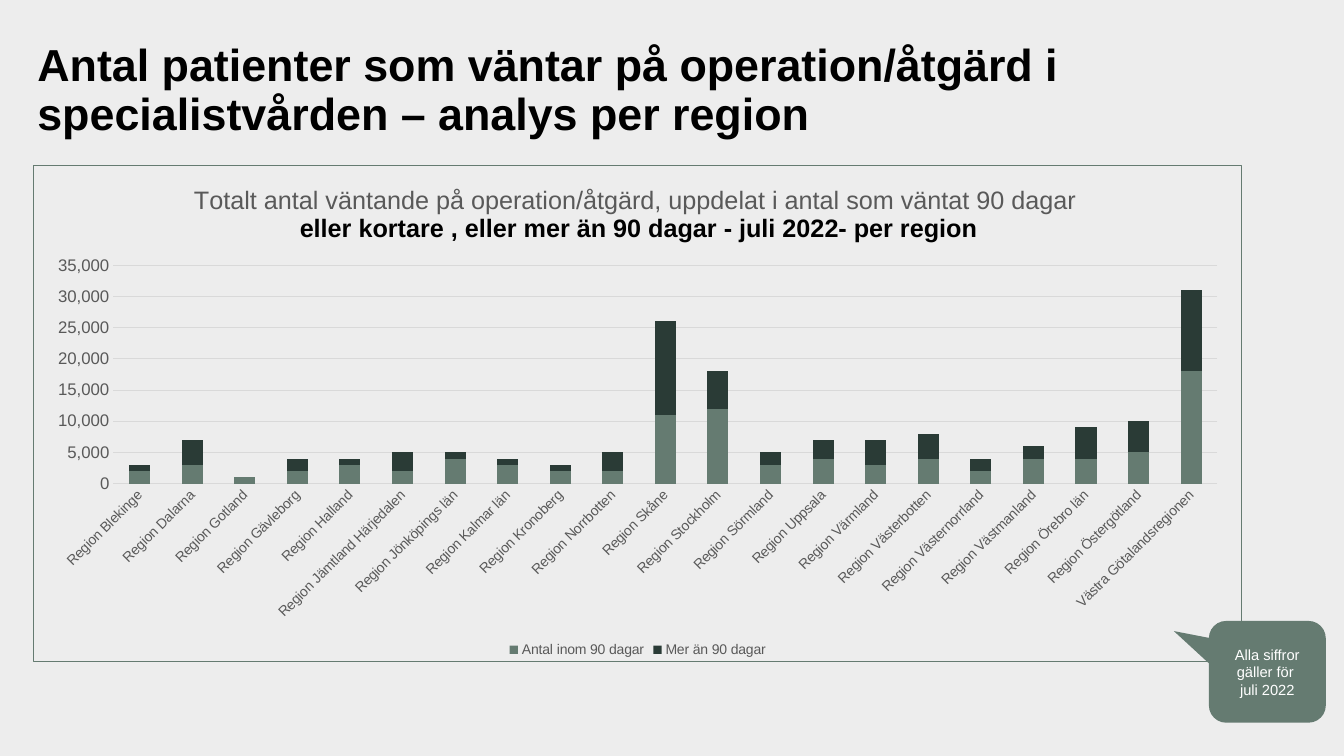
"""Build the slide on patients waiting for surgery, by region."""
from lxml import etree
from pptx import Presentation, util as u
from pptx.chart import data as cd
from pptx.dml.color import RGBColor
from pptx.enum import chart as ec, shapes, text
from pptx.oxml import parse_xml
from pptx.oxml.ns import nsdecls, qn

BACK = RGBColor(0xED, 0xED, 0xED)
GREEN = RGBColor(0x65, 0x7B, 0x71)
DARK = RGBColor(0x2A, 0x3B, 0x36)
GREY = RGBColor(0x59, 0x59, 0x59)
RULE = RGBColor(0xD9, 0xD9, 0xD9)
BLACK = RGBColor(0, 0, 0)
WHITE = RGBColor(0xFF, 0xFF, 0xFF)
WIDE, HIGH = 11.99, 4.93


def style(font, size, color, bold=False):
    font.name = "Arial"
    font.size = u.Pt(size)
    font.bold = bold
    font.color.rgb = color


def place(host, index, **spots):
    for old in host.findall(qn("c:layout")):
        host.remove(old)
    layout = etree.Element(qn("c:layout"))
    manual = etree.SubElement(layout, qn("c:manualLayout"))
    if "w" in spots:
        etree.SubElement(manual, qn("c:layoutTarget")).set("val", "inner")
    for key in ("x", "y"):
        etree.SubElement(manual, qn(f"c:{key}Mode")).set("val", "edge")
    for key, val in spots.items():
        part = val / (WIDE if key in "xw" else HIGH)
        etree.SubElement(manual, qn(f"c:{key}")).set("val", str(part))
    host.insert(index, layout)


deck = Presentation()
deck.slide_width = u.Inches(13.33)
deck.slide_height = u.Inches(7.5)
slide = deck.slides.add_slide(deck.slide_layouts[6])
slide.background.fill.solid()
slide.background.fill.fore_color.rgb = BACK

rows = [
    ("Region Blekinge", 2000, 1000),
    ("Region Dalarna", 3000, 4000),
    ("Region Gotland", 1000, 0),
    ("Region Gävleborg", 2000, 2000),
    ("Region Halland", 3000, 1000),
    ("Region Jämtland Härjedalen", 2000, 3000),
    ("Region Jönköpings län", 4000, 1000),
    ("Region Kalmar län", 3000, 1000),
    ("Region Kronoberg", 2000, 1000),
    ("Region Norrbotten", 2000, 3000),
    ("Region Skåne", 11000, 15000),
    ("Region Stockholm", 12000, 6000),
    ("Region Sörmland", 3000, 2000),
    ("Region Uppsala", 4000, 3000),
    ("Region Värmland", 3000, 4000),
    ("Region Västerbotten", 4000, 4000),
    ("Region Västernorrland", 2000, 2000),
    ("Region Västmanland", 4000, 2000),
    ("Region Örebro län", 4000, 5000),
    ("Region Östergötland", 5000, 5000),
    ("Västra Götalandsregionen", 18000, 13000),
]
names, short, long = zip(*rows)
data = cd.CategoryChartData(number_format="#,##0")
data.categories = names
data.add_series("Antal inom 90 dagar", short)
data.add_series("Mer än 90 dagar", long)
chart = slide.shapes.add_chart(
    ec.XL_CHART_TYPE.COLUMN_STACKED, u.Inches(0.33), u.Inches(1.64),
    u.Inches(WIDE), u.Inches(HIGH), data).chart
style(chart.font, 10, BLACK)

plot = chart.plots[0]
plot.gap_width = 150
plot.overlap = 100
plot.vary_by_categories = False
for series, color in zip(plot.series, (GREEN, DARK)):
    series.format.fill.solid()
    series.format.fill.fore_color.rgb = color

cats, vals = chart.category_axis, chart.value_axis
for axis, size in ((cats, 10), (vals, 12)):
    axis.major_tick_mark = axis.minor_tick_mark = ec.XL_TICK_MARK.NONE
    style(axis.tick_labels.font, size, GREY)
cats._element.find(".//" + qn("a:bodyPr")).set("rot", "-2700000")
vals.minimum_scale = 0
vals.maximum_scale = 35000
vals.major_unit = 5000
vals.has_major_gridlines = True
vals.tick_labels.number_format = "#,##0"
vals.tick_labels.number_format_is_linked = False
vals.format.line.fill.background()
for line in (cats.format.line, vals.major_gridlines.format.line):
    line.color.rgb = RULE
    line.width = u.Pt(0.75)

chart.has_legend = True
chart.legend.position = ec.XL_LEGEND_POSITION.BOTTOM
chart.legend.include_in_layout = False
style(chart.legend.font, 10, GREY)

chart.has_title = True
frame = chart.chart_title.text_frame
heads = [
    ("Totalt antal väntande på operation/åtgärd, uppdelat i antal som väntat 90 dagar ", GREY, False),
    ("eller kortare , eller mer än 90 dagar - juli 2022- per region", BLACK, True),
]
for i, (words, color, bold) in enumerate(heads):
    para = frame.add_paragraph() if i else frame.paragraphs[0]
    para.alignment = text.PP_ALIGN.CENTER
    run = para.add_run()
    run.text = words
    style(run.font, 18, color, bold)
chart.chart_title.include_in_layout = False

root = chart._chartSpace
place(root.find(".//" + qn("c:title")), 1, x=1.56, y=0.15)
place(root.find(".//" + qn("c:plotArea")), 0, x=0.79, y=0.99, w=10.96, h=2.17)
root.find(qn("c:chart")).addnext(parse_xml(
    f'<c:spPr {nsdecls("c", "a")}><a:noFill/><a:ln w="9525"><a:solidFill>'
    f'<a:srgbClr val="{GREEN}"/></a:solidFill></a:ln></c:spPr>'))

box = slide.shapes.add_textbox(
    u.Inches(0.37), u.Inches(0.18), u.Inches(10.89), u.Inches(1.21))
frame = box.text_frame
frame.word_wrap = True
frame.vertical_anchor = text.MSO_ANCHOR.BOTTOM
frame.margin_left = frame.margin_right = frame.margin_top = frame.margin_bottom = 0
para = frame.paragraphs[0]
para.line_spacing = 0.9
run = para.add_run()
run.text = "Antal patienter som väntar på operation/åtgärd i specialistvården – analys per region"
style(run.font, 32, BLACK, True)

note = slide.shapes.add_shape(
    shapes.MSO_SHAPE.ROUNDED_RECTANGULAR_CALLOUT,
    u.Inches(11.99), u.Inches(6.16), u.Inches(1.16), u.Inches(1.01))
for i, val in enumerate((-0.8, -0.4, 0.17)):
    note.adjustments[i] = val
note.shadow.inherit = False
note.fill.solid()
note.fill.fore_color.rgb = GREEN
note.line.fill.background()
frame = note.text_frame
frame.word_wrap = True
frame.vertical_anchor = text.MSO_ANCHOR.MIDDLE
for i, words in enumerate(("Alla siffror gäller för ", "juli 2022")):
    para = frame.add_paragraph() if i else frame.paragraphs[0]
    para.alignment = text.PP_ALIGN.CENTER
    run = para.add_run()
    run.text = words
    style(run.font, 10.5, WHITE)

deck.save("out.pptx")
